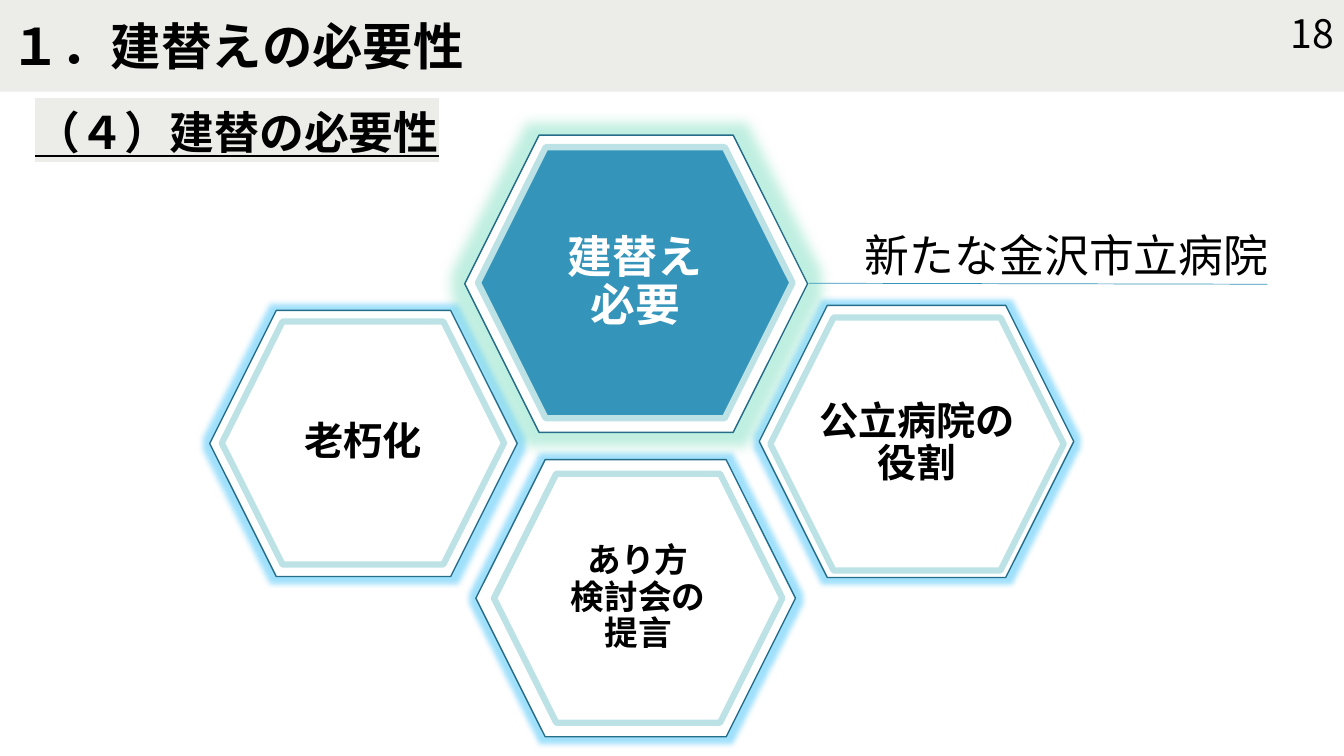
from lxml import etree
from pptx import Presentation
from pptx.dml.color import RGBColor
from pptx.enum import shapes, text
from pptx.oxml import ns
from pptx.util import Inches, Pt

FONT = "Noto Sans CJK JP"
COLORS = {
    "black": "000000",
    "white": "FFFFFF",
    "band": "ECEDE8",
    "outline": "266D8A",
    "inner": "BCE2E6",
    "accent": "3494BA",
    "blue_glow": "11B2F7",
    "green_glow": "61D7B2",
}


def rgb(name):
    return RGBColor.from_string(COLORS[name])


def add_run(paragraph, words, size, color="black", bold=False):
    run = paragraph.add_run()
    run.text = words
    font = run.font
    font.size, font.bold, font.name = Pt(size), bold, FONT
    font.color.rgb = rgb(color)
    east_asian = etree.SubElement(font._element, ns.qn("a:ea"))
    east_asian.set("typeface", FONT)
    return run


def highlight(run, color):
    mark = etree.Element(ns.qn("a:highlight"))
    etree.SubElement(mark, ns.qn("a:srgbClr")).set("val", COLORS[color])
    run.font._element.find(ns.qn("a:solidFill")).addnext(mark)


def add_title(slide, words):
    title = slide.shapes.title
    title.left, title.top = Inches(0), Inches(0)
    title.width, title.height = Inches(13.33), Inches(0.91)
    title.fill.solid()
    title.fill.fore_color.rgb = rgb("band")
    frame = title.text_frame
    frame.auto_size = text.MSO_AUTO_SIZE.NONE
    frame.vertical_anchor = text.MSO_ANCHOR.MIDDLE
    paragraph = frame.paragraphs[0]
    paragraph.alignment = text.PP_ALIGN.LEFT
    add_run(paragraph, words, 36, bold=True)


def add_label(slide, box, words, size, bold=False, align=text.PP_ALIGN.LEFT,
              anchor=text.MSO_ANCHOR.TOP):
    label = slide.shapes.add_textbox(*(Inches(value) for value in box))
    frame = label.text_frame
    frame.word_wrap = True
    frame.vertical_anchor = anchor
    paragraph = frame.paragraphs[0]
    paragraph.alignment = align
    return add_run(paragraph, words, size, bold=bold)


def add_glow(shape, color, radius):
    # The effect list is already there once the shadow is switched off
    effects = shape._element.spPr.find(ns.qn("a:effectLst"))
    glow = etree.SubElement(effects, ns.qn("a:glow"), rad=str(Pt(radius)))
    tint = etree.SubElement(glow, ns.qn("a:srgbClr"), val=COLORS[color])
    etree.SubElement(tint, ns.qn("a:alpha"), val="40000")


def add_hexagon(slide, box, fill, line, width):
    hexagon = slide.shapes.add_shape(
        shapes.MSO_SHAPE.HEXAGON, *(Inches(value) for value in box))
    hexagon.shadow.inherit = False
    hexagon.fill.solid()
    hexagon.fill.fore_color.rgb = rgb(fill)
    hexagon.line.color.rgb = rgb(line)
    hexagon.line.width = Pt(width)
    return hexagon


def add_cell(slide, outer, inner, lines, size, fill="white", color="black",
             glow="blue_glow", radius=8):
    """A glowing outer hexagon with a labelled hexagon inside it."""
    add_glow(add_hexagon(slide, outer, "white", "outline", 1), glow, radius)
    frame = add_hexagon(slide, inner, fill, "inner", 4.5).text_frame
    frame.word_wrap = False
    frame.vertical_anchor = text.MSO_ANCHOR.MIDDLE
    for index, words in enumerate(lines):
        paragraph = frame.add_paragraph() if index else frame.paragraphs[0]
        paragraph.alignment = text.PP_ALIGN.CENTER
        paragraph.line_spacing = 0.9
        add_run(paragraph, words, size, color, bold=True)


def add_line(slide, start, end):
    line = slide.shapes.add_connector(
        shapes.MSO_CONNECTOR.STRAIGHT,
        *(Inches(value) for value in start + end))
    line.line.color.rgb = rgb("accent")
    line.line.width = Pt(0.5)
    etree.SubElement(line._element.spPr, ns.qn("a:effectLst"))


def main():
    presentation = Presentation()
    presentation.slide_width = Inches(13.33)
    presentation.slide_height = Inches(7.5)
    slide = presentation.slides.add_slide(presentation.slide_layouts[5])

    # Heading band, page number and section heading
    add_title(slide, "１．建替えの必要性")
    add_label(slide, (10.08, 0.13, 3.25, 0.4), "18", 28,
              align=text.PP_ALIGN.RIGHT, anchor=text.MSO_ANCHOR.MIDDLE)
    section = add_label(slide, (0.25, 0.99, 12.83, 0.64),
                        "（４）建替の必要性", 32, bold=True)
    section.font.underline = True
    highlight(section, "band")

    # Three reasons
    add_cell(slide, (2.08, 3.08, 3.05, 2.64), (2.2, 3.19, 2.8, 2.41),
             ["老朽化"], 28)
    add_cell(slide, (4.72, 4.56, 3.17, 2.75), (4.9, 4.7, 2.86, 2.47),
             ["あり方", "検討会の", "提言"], 24)
    add_cell(slide, (7.53, 3.03, 3.12, 2.7), (7.64, 3.15, 2.91, 2.51),
             ["公立病院の", "役割"], 28)

    # Conclusion and its callout
    add_cell(slide, (4.61, 1.34, 3.4, 2.95), (4.74, 1.46, 3.12, 2.69),
             ["建替え", "必要"], 32, fill="accent", color="white",
             glow="green_glow", radius=18)
    add_line(slide, (8.02, 2.81), (12.57, 2.82))
    add_label(slide, (8.48, 2.21, 5.06, 0.64), "新たな金沢市立病院", 32)

    presentation.save("out.pptx")


if __name__ == "__main__":
    main()
